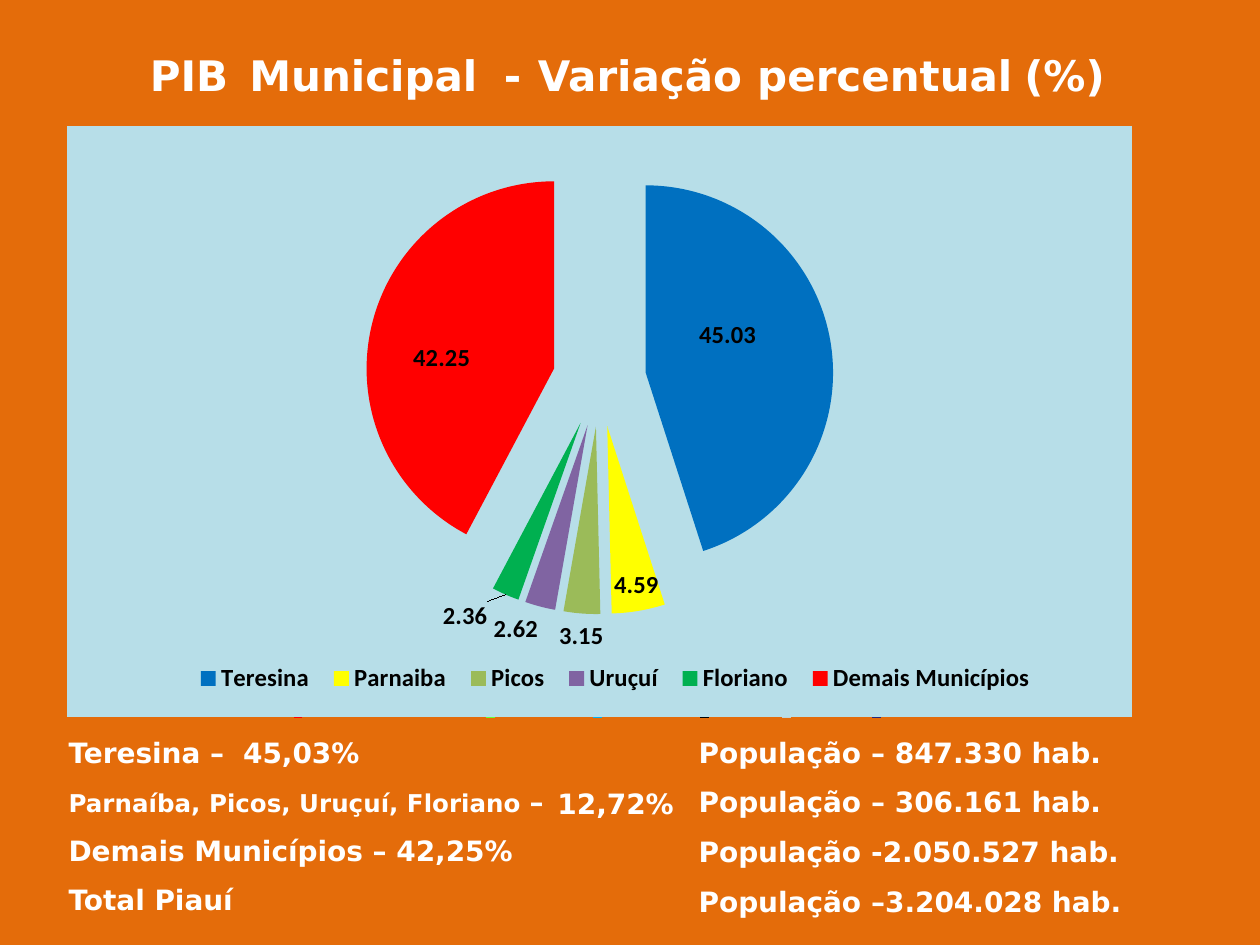
from lxml.etree import SubElement
from pptx import Presentation
from pptx.chart.data import CategoryChartData
from pptx.dml.color import RGBColor
from pptx.enum.chart import XL_CHART_TYPE, XL_LABEL_POSITION, XL_LEGEND_POSITION
from pptx.oxml import parse_xml
from pptx.oxml.ns import nsdecls, qn
from pptx.util import Inches, Pt

ORANGE = RGBColor(0xE4, 0x6C, 0x0A)
WHITE = RGBColor(0xFF, 0xFF, 0xFF)
BLACK = RGBColor(0x00, 0x00, 0x00)
PALE_BLUE = RGBColor(0xB7, 0xDE, 0xE8)
RED = RGBColor(0xFF, 0x00, 0x00)
LIME = RGBColor(0x66, 0xFF, 0x33)
CYAN = RGBColor(0x00, 0xAF, 0xEF)
GREY = RGBColor(0xC1, 0xD2, 0xD3)
NAVY = RGBColor(0x27, 0x27, 0x79)

SHARES = [
    ("Teresina", 45.03, RGBColor(0x00, 0x70, 0xC0)),
    ("Parnaiba", 4.59, RGBColor(0xFF, 0xFF, 0x00)),
    ("Picos", 3.15, RGBColor(0x9B, 0xBB, 0x59)),
    ("Uruçuí", 2.62, RGBColor(0x80, 0x64, 0xA2)),
    ("Floriano", 2.36, RGBColor(0x00, 0xB0, 0x50)),
    ("Demais Municípios", 42.25, RED),
]
MARKERS = [(23.3, RED), (38.6, LIME), (47.1, CYAN), (55.6, BLACK), (62.1, GREY), (69.2, NAVY)]
TITLE = [("PIB", 11.8, 7.6), ("Municipal", 19.7, 18.6), ("-", 39.9, 2.4),
         ("Variação", 42.6, 17.1), ("percentual", 60, 20.8), ("(%)", 81.2, 8.6)]
POPULATION = ["– 847.330 hab.", "– 306.161 hab.", "-2.050.527 hab.", "–3.204.028 hab."]
GAPS = (8.5, 9.4, 9.4)


class Slide:
    """Page style and elements on a grid of 100 columns by 75 rows."""

    def __init__(self, page, font="DejaVu Sans", chart_font="Calibri"):
        self.page, self.font, self.chart_font = page, font, chart_font
        page.background.fill.solid()
        page.background.fill.fore_color.rgb = ORANGE

    def grid(self, *cells):
        return [Inches(cell / 10) for cell in cells]

    def square(self, left, top, side, color):
        start, *corners = [self.grid(left + side * x, top + side * y)
                           for x, y in ((0, 1), (1, 1), (1, 0), (0, 0))]
        builder = self.page.shapes.build_freeform(*start)
        builder.add_line_segments(corners, close=True)
        shape = builder.convert_to_shape()
        shape.shadow.inherit = False
        shape.fill.solid()
        shape.fill.fore_color.rgb = color
        shape.line.fill.background()

    def text(self, place, lines, size=16, leading=17.6, before=0.9, gaps=GAPS):
        frame = self.page.shapes.add_textbox(*self.grid(*place)).text_frame
        frame.word_wrap = True
        frame.margin_left = frame.margin_right = 0
        frame.margin_top = frame.margin_bottom = 0
        for index, line in enumerate(lines):
            para = frame.add_paragraph() if index else frame.paragraphs[0]
            para.text = line
            para.line_spacing = 1.01 if index else Pt(leading)
            para.space_before = Pt(gaps[index - 1] if index else before)
            para._p.get_or_add_pPr().set("marL", str(Inches(0.01)))
            self.style(para.font, size, WHITE, self.font)
        return frame

    def style(self, font, size, color, name, bold=True):
        font.name, font.size, font.bold = name, Pt(size), bold
        font.color.rgb = color

    def pie(self, place, shares, layout, legend_layout, explosion, shifts):
        data = CategoryChartData()
        data.categories = [name for name, _, _ in shares]
        data.add_series("Series 1", [value for _, value, _ in shares])
        chart = self.page.shapes.add_chart(XL_CHART_TYPE.PIE, *self.grid(*place), data).chart
        chart.has_title = False
        self.style(chart.font, 10, BLACK, self.chart_font, False)
        chart.has_legend = True
        chart.legend.position = XL_LEGEND_POSITION.BOTTOM
        chart.legend.include_in_layout = False
        self.style(chart.legend.font, 14.1, BLACK, self.chart_font)

        plot = chart.plots[0]
        plot.vary_by_categories = True
        series = plot.series[0]
        series._element.find(qn("c:tx")).addnext(
            parse_xml(f'<c:explosion {nsdecls("c")} val="{explosion}"/>'))
        labels = series.data_labels
        labels.show_value = True
        labels.position = XL_LABEL_POSITION.BEST_FIT
        self.style(labels.font, 14, BLACK, self.chart_font)
        for index, (_, _, color) in enumerate(shares):
            point = series.points[index]
            point.format.fill.solid()
            point.format.fill.fore_color.rgb = color
            if index in shifts:
                self.style(point.data_label.font, 14, BLACK, self.chart_font)
                point.data_label.position = XL_LABEL_POSITION.CENTER
        for label in labels._element.findall(qn("c:dLbl")):
            anchor = label.find(qn("c:idx"))
            self.arrange(label, anchor, zip("xy", shifts[int(anchor.get("val"))]))

        body = chart._chartSpace.find(qn("c:chart"))
        body.addnext(parse_xml(
            f'<c:spPr {nsdecls("c", "a")}><a:solidFill><a:srgbClr val="{PALE_BLUE}"/>'
            '</a:solidFill><a:ln><a:noFill/></a:ln></c:spPr>'))
        edges = [("xMode", "edge"), ("yMode", "edge")]
        self.arrange(body.find(qn("c:plotArea")), None,
                     [("layoutTarget", "inner"), *edges, *zip("xywh", layout)])
        legend = chart.legend._element
        self.arrange(legend, legend.find(qn("c:legendPos")), [*edges, *zip("xywh", legend_layout)])

    def arrange(self, owner, anchor, settings):
        for old in owner.findall(qn("c:layout")):
            owner.remove(old)
        holder = parse_xml(f'<c:layout {nsdecls("c")}/>')
        manual = SubElement(holder, qn("c:manualLayout"))
        for tag, value in settings:
            SubElement(manual, qn(f"c:{tag}")).set("val", str(value))
        if anchor is None:
            owner.insert(0, holder)
        else:
            anchor.addnext(holder)


def main():
    deck = Presentation()
    deck.slide_width, deck.slide_height = Inches(10), Inches(7.5)
    slide = Slide(deck.slides.add_slide(deck.slide_layouts[6]))

    for left, color in MARKERS:
        slide.square(left, 56.25, 0.7, color)
    for word, left, width in TITLE:
        slide.text((left, 4.3, width, 3.6), [word], size=24, leading=25.9, before=1.3)

    slide.text((5.35, 58.6, 13.7, 2.8), ["Teresina –"])
    slide.text((19.2, 58.6, 10.6, 2.8), ["45,03%"])
    slide.text((55.35, 58.6, 13.5, 13.3), ["População"] * len(POPULATION))
    slide.text((69.05, 58.6, 21, 13.3), POPULATION)
    towns = slide.text(
        (5.35, 62.5, 49, 9.4),
        ["Parnaíba, Picos, Uruçuí, Floriano ", "Demais Municípios – 42,25%", "Total Piauí"],
        gaps=(8.5, 8.5)).paragraphs[0]
    towns.runs[0].font.size = Pt(14)
    towns.add_run().text = "–"
    slide.text((44.15, 63.2, 10.3, 2.7), ["12,72%"], leading=13.4, before=0.7)

    slide.pie((5.33, 10, 84.5, 46.9), SHARES, layout=(0.28, 0.03, 0.44, 0.8),
              legend_layout=(0.11, 0.9, 0.81, 0.07), explosion=25,
              shifts={0: (-0.01, -0.04), 5: (-0.02, 0.02)})
    deck.save("out.pptx")


if __name__ == "__main__":
    main()
